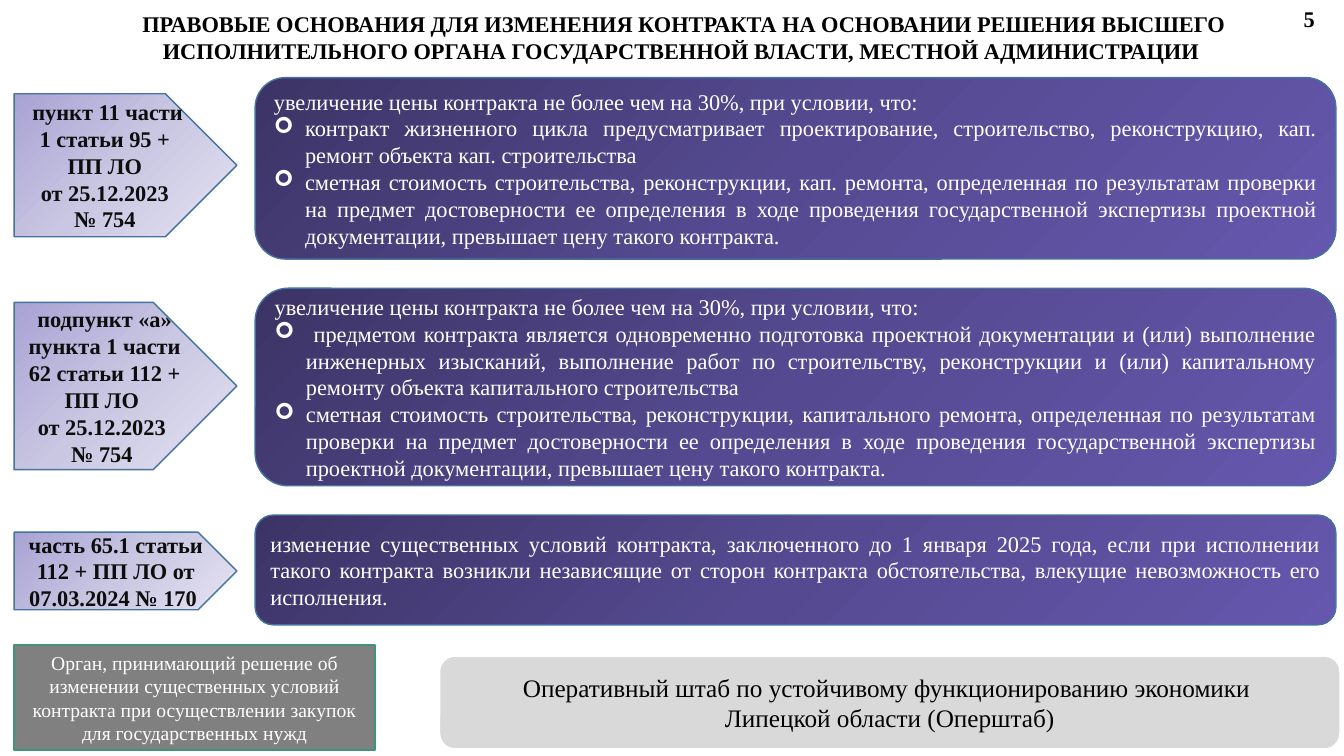
from copy import deepcopy

from lxml import etree
from pptx import Presentation
from pptx import util as u
from pptx.dml.color import RGBColor
from pptx.enum import shapes, text
from pptx.oxml import ns

WIDE, HIGH = u.Inches(13.33), u.Inches(7.5)
COL, ROW = WIDE / 100, HIGH / 100
FONT = "Times New Roman"
KIND = shapes.MSO_SHAPE
ALIGN = text.PP_ALIGN
LEFT = 1.05
PALE = ("A9A3D4", "CAC7E3", "E5E3F1")
DEEP = ("3C3466", "554A91", "6557AD")
EDGE = "43739E"
LEAD = "увеличение цены контракта не более чем на 30%, при условии, что:"
ORDER = ["от 25.12.2023 ", "№ 754 "]

BASES = [
    (12.4, 18.93, ["пункт 11 части 1 статьи 95 + ", "ПП ЛО "] + ORDER,
     10.27, 24, [
        LEAD,
        "контракт жизненного цикла предусматривает проектирование, строительство, "
        "реконструкцию, кап. ремонт объекта кап. строительства",
        "сметная стоимость строительства, реконструкции, кап. ремонта, определенная "
        "по результатам проверки на предмет достоверности ее определения в ходе "
        "проведения государственной экспертизы проектной документации, превышает "
        "цену такого контракта. "]),
    (40, 22.13, ["подпункт «а» пункта 1 части 62 статьи 112 + ПП ЛО "] + ORDER,
     38.13, 26.13, [
        LEAD,
        " предметом контракта является одновременно подготовка проектной "
        "документации и (или) выполнение инженерных изысканий, выполнение работ "
        "по строительству, реконструкции и (или) капитальному ремонту объекта "
        "капитального строительства",
        "сметная стоимость строительства, реконструкции, капитального ремонта, "
        "определенная по результатам проверки на предмет достоверности ее "
        "определения в ходе проведения государственной экспертизы проектной "
        "документации, превышает цену такого контракта. "]),
    (70.4, 10.27, ["часть 65.1 статьи 112 + ПП ЛО от 07.03.2024 № 170 "],
     68.13, 14.53, [
        "изменение существенных условий контракта, заключенного до 1 января "
        "2025 года, если при исполнении такого контракта возникли независящие от "
        "сторон контракта обстоятельства, влекущие невозможность его исполнения. "]),
]


def rgb(code):
    return RGBColor.from_string(code)


def place(x, y, w, h):
    return [u.Emu(round(v)) for v in (x * COL, y * ROW, w * COL, h * ROW)]


def write(shape, lines, size, color, bold=False, align=ALIGN.CENTER):
    frame = shape.text_frame
    frame.word_wrap = True
    frame.text = "\n".join(lines)
    for par in frame.paragraphs:
        par.alignment = align
        for run in par.runs:
            font = run.font
            font.name, font.size, font.bold = FONT, u.Pt(size), bold
            font.color.rgb = rgb(color)


def blend(fill, shape, colors):
    fill.gradient()
    fill.gradient_angle = 315
    stops = shape.element.spPr.find(".//" + ns.qn("a:gsLst"))
    stops.insert(1, deepcopy(stops[0]))
    for spot, stop, color in zip((0, 0.5, 1), fill.gradient_stops, colors):
        stop.position = spot
        stop.color.rgb = rgb(color)


def block(slide, kind, box, fill=None, edge=None):
    shape = slide.shapes.add_shape(kind, *place(*box))
    shape.shadow.inherit = False
    shape.text_frame.vertical_anchor = text.MSO_ANCHOR.MIDDLE
    if fill is None:
        shape.fill.background()
    elif isinstance(fill, tuple):
        blend(shape.fill, shape, fill)
    else:
        shape.fill.solid()
        shape.fill.fore_color.rgb = rgb(fill)
    if edge:
        shape.line.color.rgb = rgb(edge)
        shape.line.width = u.Pt(1)
    else:
        shape.line.fill.background()
    return shape


def bullet(par):
    props = par._p.get_or_add_pPr()
    props.set("marL", str(u.Inches(0.31)))
    props.set("indent", str(-u.Inches(0.31)))
    font = etree.SubElement(props, ns.qn("a:buFont"))
    font.set("typeface", "Wingdings")
    mark = etree.SubElement(props, ns.qn("a:buChar"))
    mark.set("char", "➢")


def basis(slide, tag_y, tag_h, tag, bar_y, bar_h, terms):
    plate = block(slide, KIND.PENTAGON, (LEFT, tag_y, 16.58, tag_h), PALE, EDGE)
    write(plate, tag, 16, "0D0D0D", True)
    bar = block(slide, KIND.ROUNDED_RECTANGLE,
                (18.98, bar_y, 80.42, bar_h), DEEP, EDGE)
    write(bar, terms, 16, "FFFFFF", align=ALIGN.JUSTIFY)
    for par in bar.text_frame.paragraphs[1:]:
        bullet(par)


def main():
    deck = Presentation()
    deck.slide_width, deck.slide_height = WIDE, HIGH
    slide = deck.slides.add_slide(deck.slide_layouts[6])

    title = block(slide, KIND.ROUNDED_RECTANGLE, (4.13, 0, 93.55, 9.73))
    write(title, ["ПРАВОВЫЕ ОСНОВАНИЯ ДЛЯ ИЗМЕНЕНИЯ КОНТРАКТА НА ОСНОВАНИИ РЕШЕНИЯ "
                  "ВЫСШЕГО ИСПОЛНИТЕЛЬНОГО ОРГАНА ГОСУДАРСТВЕННОЙ ВЛАСТИ, МЕСТНОЙ "
                  "АДМИНИСТРАЦИИ "], 16, "000000", True)

    for item in BASES:
        basis(slide, *item)

    staff = block(slide, KIND.ROUNDED_RECTANGLE,
                  (32.71, 86.8, 66.99, 12.27), "D9D9D9", "FFFFFF")
    write(staff, ["Оперативный штаб по устойчивому функционированию экономики ",
                  "Липецкой области (Оперштаб)"], 18, "000000")

    organ = block(slide, KIND.RECTANGLE,
                  (LEFT, 85.33, 26.86, 13.87), "808080", "3D9573")
    write(organ, ["Орган, принимающий решение об изменении существенных условий "
                  "контракта при осуществлении закупок для государственных нужд"],
          14, "FFFFFF")

    page = slide.shapes.add_textbox(*place(96.25, 0, 3.08, 4.93))
    write(page, ["5"], 16, "000000", True, ALIGN.LEFT)
    deck.save("out.pptx")


if __name__ == "__main__":
    main()
